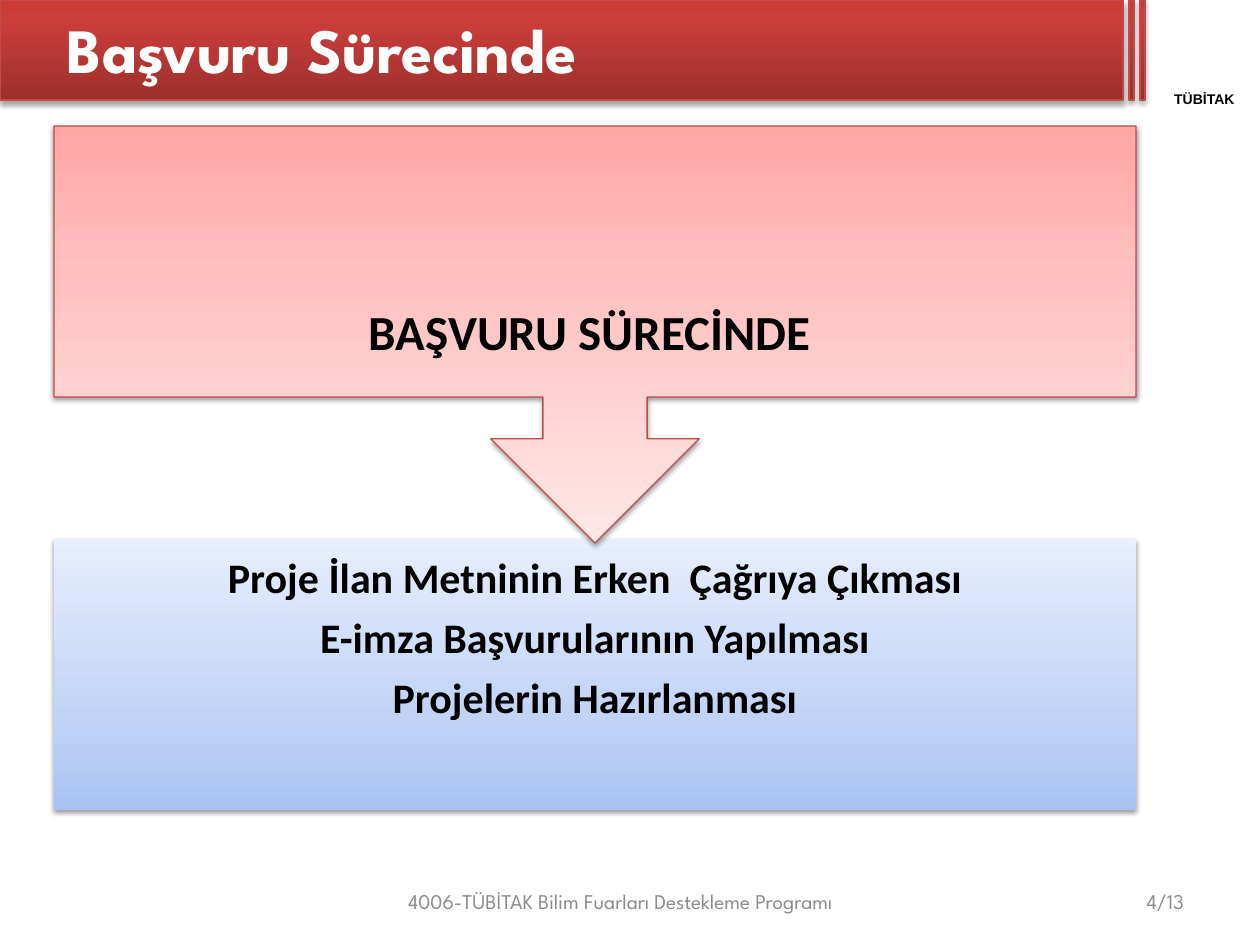
from pptx import Presentation
from pptx.dml.color import RGBColor
from pptx.enum.shapes import MSO_SHAPE
from pptx.enum.text import MSO_ANCHOR, PP_ALIGN
from pptx.oxml import parse_xml
from pptx.oxml.ns import nsdecls, qn
from pptx.util import Emu, Pt

RECT, CALLOUT = MSO_SHAPE.RECTANGLE, MSO_SHAPE.UP_ARROW_CALLOUT
LEFT, MID, RIGHT = PP_ALIGN.LEFT, PP_ALIGN.CENTER, PP_ALIGN.RIGHT
TOP, CENTER = MSO_ANCHOR.TOP, MSO_ANCHOR.MIDDLE
SCALE = 914400 / 126
HEX = {"black": "000000", "white": "FFFFFF", "gray": "8C8C8C", "edge": "BF4C48"}
RED = [(0, "9C2F2D"), (80, "CB3E3A"), (100, "CE3B37")]
PINK = [(0, "FFA6A5"), (35, "FFC0BF"), (100, "FFE7E7")]
BLUE = [(0, "A8C2F4"), (35, "C2D4F6"), (100, "E7EEFD")]
HEAD = {"name": "League Spartan", "size": Pt(36), "bold": True}
FOOT = {"name": "League Spartan", "size": Pt(12)}
MARK = {"name": "Arial", "size": Pt(8), "bold": True}
BIG = {"name": "Calibri", "size": Pt(28), "bold": True}
BODY = {"name": "Calibri", "size": Pt(24), "bold": True}
TIGHT = {"line_spacing": 0.9, "space_after": Pt(8.4)}
STEPS = [
    "Proje İlan Metninin Erken  Çağrıya Çıkması",
    "E-imza Başvurularının Yapılması",
    "Projelerin Hazırlanması",
]


def px(n):
    """Turn pixels into EMU."""
    return Emu(round(n * SCALE))


def apply(obj, values):
    """Set attributes from a dict."""
    for key, val in values.items():
        setattr(obj, key, val)


def shade(shape, stops):
    """Fill a shape with a gradient that starts at its foot."""
    marks = "".join(
        f'<a:gs pos="{pos * 1000}"><a:srgbClr val="{tone}"/></a:gs>' for pos, tone in stops
    )
    shape._element.spPr.insert(2, parse_xml(
        f'<a:gradFill {nsdecls("a")} rotWithShape="1"><a:gsLst>{marks}</a:gsLst>'
        '<a:lin ang="16200000" scaled="0"/></a:gradFill>'
    ))


def drop(shape, alpha, gap):
    """Give a shape a soft shadow below it."""
    shape.shadow.inherit = False
    shape._element.spPr.find(qn("a:effectLst")).append(parse_xml(
        f'<a:outerShdw {nsdecls("a")} blurRad="{Pt(3.1)}" dist="{Pt(gap)}" dir="5400000" '
        f'rotWithShape="0"><a:srgbClr val="{HEX["black"]}">'
        f'<a:alpha val="{alpha * 1000}"/></a:srgbClr></a:outerShdw>'
    ))


def block(slide, kind, box, stops, edge=True, alpha=38, gap=1.6):
    """Draw a gradient shape with a shadow."""
    shape = slide.shapes.add_shape(kind, *map(px, box))
    shade(shape, stops)
    if edge:
        shape.line.color.rgb = RGBColor.from_string(HEX["edge"])
        shape.line.width = Pt(0.75)
    else:
        shape.line.fill.background()
    drop(shape, alpha, gap)
    return shape


def label(slide, box, lines, font, tone="black", align=MID, anchor=CENTER, pad=(13, 6), form=None):
    """Write lines of text in a box."""
    frame = slide.shapes.add_textbox(*map(px, box)).text_frame
    side, edge = map(px, pad)
    apply(frame, {
        "word_wrap": True, "vertical_anchor": anchor, "margin_left": side,
        "margin_right": side, "margin_top": edge, "margin_bottom": edge,
    })
    for num, line in enumerate(lines):
        para = frame.add_paragraph() if num else frame.paragraphs[0]
        apply(para, {"alignment": align, **(form or {})})
        run = para.add_run()
        run.text = line
        apply(run.font, font)
        run.font.color.rgb = RGBColor.from_string(HEX[tone])


def main():
    """Build the slide."""
    deck = Presentation()
    deck.slide_width, deck.slide_height = px(1260), px(945)
    slide = deck.slides.add_slide(deck.slide_layouts[6])

    for left, width in [(0, 1123), (1129, 5), (1140, 5)]:
        block(slide, RECT, (left, 0, width, 100), RED, alpha=35, gap=1.8)
    label(slide, (1140, 91, 129, 16), ["TÜBİTAK"], MARK, anchor=TOP, pad=(0, 0))
    label(slide, (54, 0, 1071, 97), ["Başvuru Sürecinde"], HEAD, "white", LEFT)
    label(slide, (134, 876, 973, 50), ["4006-TÜBİTAK Bilim Fuarları Destekleme Programı"],
          FOOT, "gray")
    label(slide, (903, 876, 294, 50), ["4/13"], FOOT, "gray", RIGHT)

    steps, call = (54, 539, 1082, 271), (54, 126, 1082, 417)
    block(slide, RECT, steps, BLUE, edge=False)
    label(slide, steps, STEPS, BODY, anchor=TOP, pad=(24, 18), form=TIGHT)
    block(slide, CALLOUT, call, PINK).rotation = 180
    label(slide, call, ["BAŞVURU SÜRECİNDE "], BIG, pad=(28, 28), form=TIGHT)
    deck.save("out.pptx")


if __name__ == "__main__":
    main()
